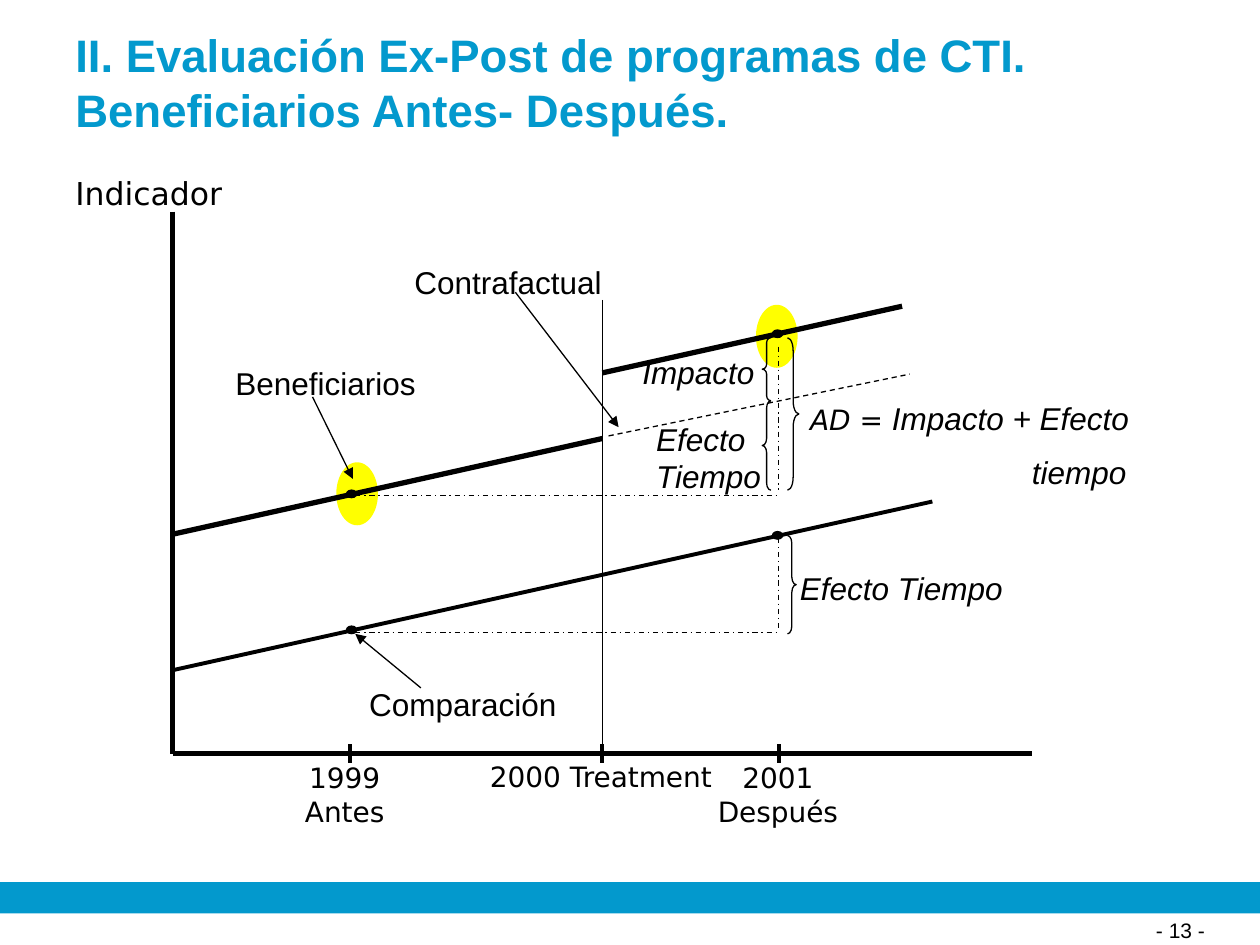
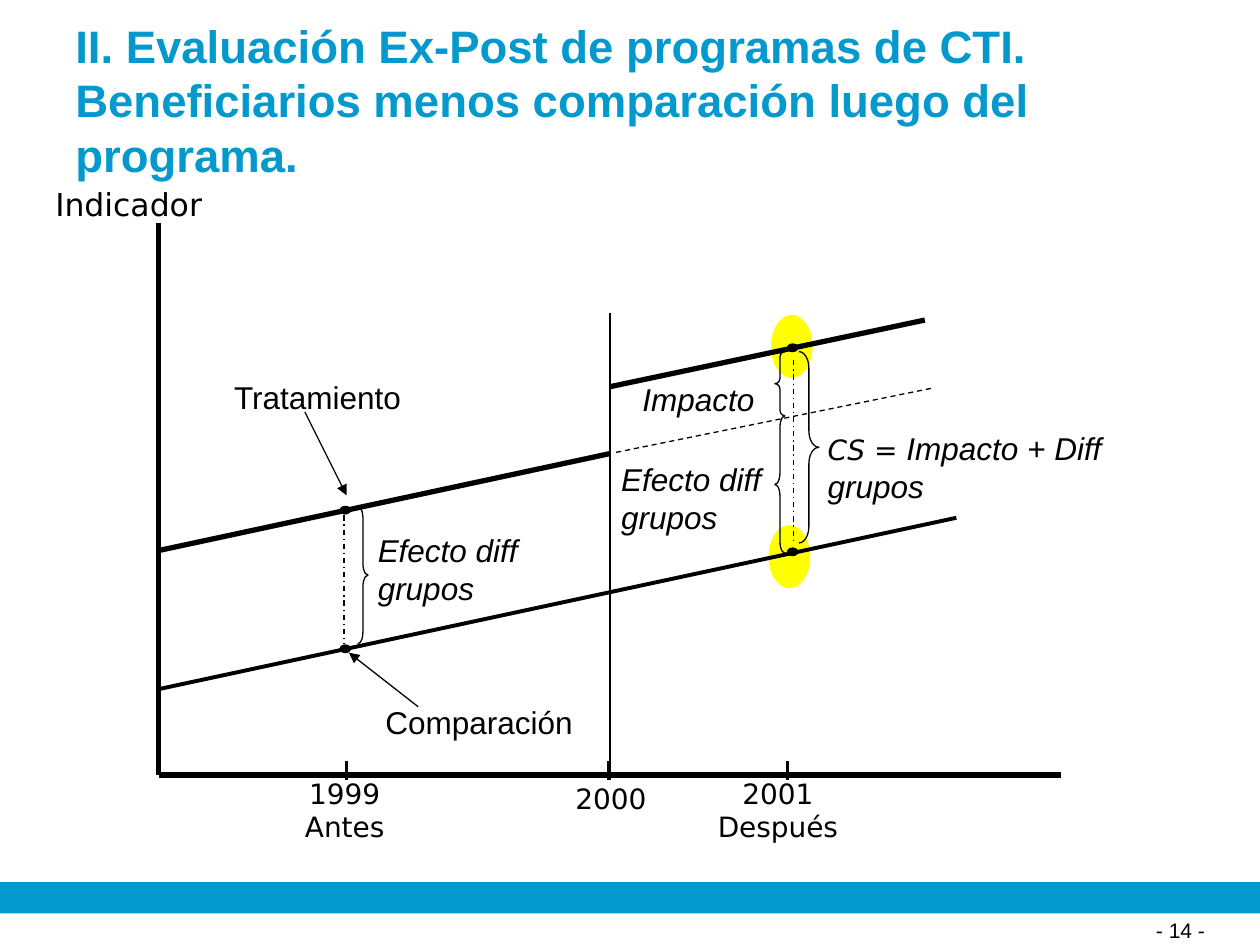
from dataclasses import dataclass
from typing import Optional

from lxml.etree import SubElement
from pptx import Presentation
from pptx.dml.color import RGBColor
from pptx.enum.dml import MSO_LINE
from pptx.enum.shapes import MSO_CONNECTOR, MSO_SHAPE
from pptx.enum.text import MSO_ANCHOR, PP_ALIGN
from pptx.oxml.ns import qn
from pptx.util import Pt

BLUE, BLACK, YELLOW = "0399CD", "000000", "FFFF00"
SANS, AXIS_FONT = "Arial", "DejaVu Sans"
LEFT, RIGHT = MSO_SHAPE.LEFT_BRACE, MSO_SHAPE.RIGHT_BRACE
DASH, DASH_DOT = MSO_LINE.DASH, MSO_LINE.DASH_DOT
HEADING = "II. Evaluación Ex-Post de programas de CTI. "
DOT_SIZE, SPOT_SIZE = (5.8, 4.3), (23.8, 36)
TICK_HALF = 5.4
YEAR_WIDTH = 130.3
Point = tuple[float, float]


@dataclass
class Stroke:
    """A straight line, dashed or with an arrowhead when asked."""
    start: Point
    end: Point
    width: float = 0.75
    dash: Optional[MSO_LINE] = None
    arrow: bool = False


@dataclass
class Brace:
    """A curly brace that marks an effect."""
    kind: MSO_SHAPE
    x: float
    y: float
    width: float
    height: float
    curl: float


@dataclass
class Label:
    """A piece of text in one style."""
    x: float
    y: float
    width: float
    text: str
    lines: int = 1
    italic: bool = False
    font: str = SANS
    size: float = 18
    color: str = BLACK
    bold: bool = False
    align: PP_ALIGN = PP_ALIGN.LEFT
    anchor: MSO_ANCHOR = MSO_ANCHOR.TOP


@dataclass
class Formula:
    """A variable, what it equals, and an indented second line."""
    x: float
    y: float
    width: float
    variable: str
    effects: str
    tail: str = ""
    tail_indent: float = 0


@dataclass
class Diagram:
    """Everything that differs from one slide to the next."""
    number: int
    title: str
    title_middle: float
    origin: Point
    top: float
    right: float
    ticks: tuple[float, ...]
    tick_y: float
    spots: list[Point]
    dots: list[Point]
    strokes: list[Stroke]
    braces: list[Brace]
    labels: list[Label]
    formula: Formula


def rgb(value: str) -> RGBColor:
    """Turn a hex string into a colour."""
    return RGBColor.from_string(value)


def style_span(span, font: str, size: float, color: str = BLACK,
               bold: bool = False, italic: bool = False) -> None:
    """Format one run of text."""
    span.font.name, span.font.size = font, Pt(size)
    span.font.bold, span.font.italic = bold, italic
    span.font.color.rgb = rgb(color)


def add_box(page, x: float, y: float, width: float, height: float):
    """Add a wrapping text box and return its frame."""
    frame = page.shapes.add_textbox(Pt(x), Pt(y), Pt(width), Pt(height)).text_frame
    frame.word_wrap = True
    return frame


def draw_label(page, label: Label) -> None:
    """Draw a label as tall as its lines."""
    height = 7.2 + label.lines * label.size * 1.2
    frame = add_box(page, label.x, label.y, label.width, height)
    frame.vertical_anchor = label.anchor
    para = frame.paragraphs[0]
    para.text, para.alignment = label.text, label.align
    for span in para.runs:
        style_span(span, label.font, label.size, label.color, label.bold, label.italic)


def draw_formula(page, formula: Formula) -> None:
    """Draw the equation beside the wide brace."""
    frame = add_box(page, formula.x, formula.y, formula.width, 50.4)
    para = frame.paragraphs[0]
    for text, font, size, italic in ((formula.variable, AXIS_FONT, 16, True),
                                     (" = ", AXIS_FONT, 16, False),
                                     (formula.effects, SANS, 18, True)):
        span = para.add_run()
        span.text = text
        style_span(span, font, size, italic=italic)
    if formula.tail:
        para = frame.add_paragraph()
        para._p.get_or_add_pPr().set("marL", str(Pt(formula.tail_indent)))
        para.text, para.space_before = formula.tail, Pt(9)
        style_span(para.runs[0], SANS, 18, italic=True)


def draw_shape(page, kind: MSO_SHAPE, x: float, y: float, width: float, height: float,
               fill: Optional[str] = None, line: Optional[str] = None):
    """Draw a preset shape with an optional fill and outline."""
    shape = page.shapes.add_shape(kind, Pt(x), Pt(y), Pt(width), Pt(height))
    shape.shadow.inherit = False
    if fill:
        shape.fill.solid()
        shape.fill.fore_color.rgb = rgb(fill)
    else:
        shape.fill.background()
    if line:
        shape.line.color.rgb, shape.line.width = rgb(line), Pt(0.75)
    else:
        shape.line.fill.background()
    return shape


def draw_brace(page, brace: Brace) -> None:
    """Draw a brace with its curl."""
    shape = draw_shape(page, brace.kind, brace.x, brace.y, brace.width, brace.height,
                       line=BLACK)
    shape.adjustments[0] = brace.curl


def draw_stroke(page, stroke: Stroke) -> None:
    """Draw a black line."""
    line = page.shapes.add_connector(MSO_CONNECTOR.STRAIGHT,
                                     *(Pt(v) for v in (*stroke.start, *stroke.end)))
    line.line.color.rgb, line.line.width = rgb(BLACK), Pt(stroke.width)
    if stroke.dash:
        line.line.dash_style = stroke.dash
    if stroke.arrow:
        SubElement(line.line._get_or_add_ln(), qn("a:tailEnd"), type="triangle")
    SubElement(line._element.spPr, qn("a:effectLst"))


def axis_strokes(diagram: Diagram) -> list[Stroke]:
    """Work out both axes and the year ticks."""
    x, base = diagram.origin
    axes = [Stroke((x, diagram.top), (x, base), 3),
            Stroke((x, base), (diagram.right, base), 3)]
    ticks = [Stroke((tick, diagram.tick_y - TICK_HALF),
                    (tick, diagram.tick_y + TICK_HALF), 2.25) for tick in diagram.ticks]
    return axes + ticks


def year(x: float, y: float, text: str, lines: int = 2, width: float = YEAR_WIDTH) -> Label:
    """Describe a centred label under the time axis."""
    return Label(x, y, width, text, lines, font=AXIS_FONT, size=16, align=PP_ALIGN.CENTER)


def axis_name(x: float, y: float) -> Label:
    """Describe the name of the vertical axis."""
    return Label(x, y, 104, "Indicador", font=AXIS_FONT)


def draw_diagram(deck, diagram: Diagram) -> None:
    """Build one slide."""
    page = deck.slides.add_slide(deck.slide_layouts[6])
    for x, y in diagram.spots:
        draw_shape(page, MSO_SHAPE.OVAL, x, y, *SPOT_SIZE, fill=YELLOW)
    draw_label(page, Label(36, diagram.title_middle - 19.2, 648, HEADING + diagram.title,
                           size=26, color=BLUE, bold=True, anchor=MSO_ANCHOR.MIDDLE))
    draw_shape(page, MSO_SHAPE.RECTANGLE, 0, 504, 720, 18, fill=BLUE)
    for stroke in axis_strokes(diagram) + diagram.strokes:
        draw_stroke(page, stroke)
    for x, y in diagram.dots:
        draw_shape(page, MSO_SHAPE.OVAL, x, y, *DOT_SIZE, fill=BLACK, line=BLACK)
    for brace in diagram.braces:
        draw_brace(page, brace)
    for label in diagram.labels:
        draw_label(page, label)
    draw_formula(page, diagram.formula)
    draw_label(page, Label(509.8, 520.6, 185.8, f"- {diagram.number} -", size=12,
                           align=PP_ALIGN.RIGHT))


BEFORE_AFTER = Diagram(
    number=13, title="Beneficiarios Antes- Después.", title_middle=46.8,
    origin=(98.6, 430.6), top=121, right=589.7,
    ticks=(200.2, 344.2, 445), tick_y=430.6,
    spots=[(432, 174.2), (192.2, 264.2)],
    dots=[(198, 357.8), (441.4, 303.8), (198, 280.1), (441.4, 188.6)],
    strokes=[
        Stroke((98.6, 305.3), (344.2, 250.6), 3),
        Stroke((344.2, 213.1), (515.5, 175), 3),
        Stroke((98.6, 383), (532.8, 286.6), 2.25),
        Stroke((344.2, 171.4), (344.2, 430.6)),
        Stroke((347.8, 249.1), (519.8, 213.8), dash=DASH),
        Stroke((203, 283), (445, 283), dash=DASH_DOT),
        Stroke((445, 198), (445, 280.1), dash=DASH_DOT),
        Stroke((203, 361.4), (445, 361.4), dash=DASH_DOT),
        Stroke((445, 307.4), (445, 358.6), dash=DASH_DOT),
        Stroke((178.6, 226.8), (201.6, 273.6), arrow=True),
        Stroke((240.5, 393.1), (203, 362.2), arrow=True),
        Stroke((294.5, 167), (353.5, 244.1), arrow=True)],
    braces=[
        Brace(RIGHT, 450, 193, 6.5, 87.1, 1.16),
        Brace(LEFT, 435.6, 193, 5, 36, 0.56),
        Brace(LEFT, 435.6, 229, 5, 51.1, 0.81),
        Brace(RIGHT, 450, 306, 5, 56.2, 0.88)],
    labels=[
        axis_name(36, 95.8),
        Label(127.4, 204.5, 171.4, "Beneficiarios"),
        Label(203.8, 388.1, 152.6, "Comparación"),
        Label(229.7, 146.9, 136.1, "Contrafactual"),
        Label(360, 198, 89.3, "Impacto", italic=True),
        Label(367.9, 236.2, 119.5, "Efecto Tiempo", 2, italic=True),
        Label(450, 321.8, 149.8, "Efecto Tiempo", italic=True),
        year(131.8, 431.3, "1999\nAntes"),
        year(265.7, 430.6, "2000 Treatment", 1, 155.5),
        year(379.4, 431.3, "2001\nDespués")],
    formula=Formula(455.8, 224.6, 216.7, "AD", "Impacto + Efecto", "tiempo", 126.7))

WITH_WITHOUT = Diagram(
    number=14, title="Beneficiarios menos comparación luego del programa.", title_middle=57,
    origin=(90.7, 442.8), top=127.4, right=606.2,
    ticks=(198, 347.8, 450), tick_y=440.2,
    spots=[(439.2, 300.2), (440.6, 180)],
    dots=[(194.4, 368.6), (450, 313.2), (194.4, 289.4), (450, 196.6)],
    strokes=[
        Stroke((90.7, 314.6), (348.5, 259.2), 3),
        Stroke((348.5, 221), (528.5, 182.9), 3),
        Stroke((90.7, 393.8), (546.5, 295.9), 2.25),
        Stroke((348.5, 178.6), (348.5, 442.8)),
        Stroke((352.1, 258.5), (532.8, 221.8), dash=DASH),
        Stroke((453.6, 205.9), (453.6, 310.3), dash=DASH_DOT),
        Stroke((196.6, 294.5), (196.6, 367.9), dash=DASH_DOT),
        Stroke((174.2, 235.4), (198, 283), arrow=True),
        Stroke((239, 403.9), (199.4, 373), arrow=True)],
    braces=[
        Brace(RIGHT, 456.5, 200.9, 11.5, 109.4, 0.81),
        Brace(LEFT, 442.8, 200.9, 5.8, 36.7, 0.53),
        Brace(LEFT, 442.8, 237.6, 5.8, 78.5, 1.13),
        Brace(RIGHT, 204.5, 289.4, 5.8, 78.5, 1.16)],
    labels=[
        axis_name(24.5, 102.2),
        Label(126.7, 212.4, 180, "Tratamiento"),
        Label(213.1, 398.2, 180.7, "Comparación"),
        Label(360, 213.8, 95.8, "Impacto", italic=True),
        Label(347.8, 259.2, 126, "Efecto diff grupos", 2, italic=True),
        Label(208.8, 300.2, 115.2, "Efecto diff grupos", 2, italic=True),
        year(131.8, 439.9, "1999\nAntes"),
        year(278.6, 442.8, "2000", 1, 141.1),
        year(379.4, 439.9, "2001\nDespués")],
    formula=Formula(465.8, 241.9, 223.9, "CS", "Impacto + Diff grupos"))


def main() -> None:
    """Build and save the deck."""
    deck = Presentation()
    deck.slide_width, deck.slide_height = Pt(720), Pt(540)
    for diagram in (BEFORE_AFTER, WITH_WITHOUT):
        draw_diagram(deck, diagram)
    deck.save("out.pptx")


if __name__ == "__main__":
    main()
